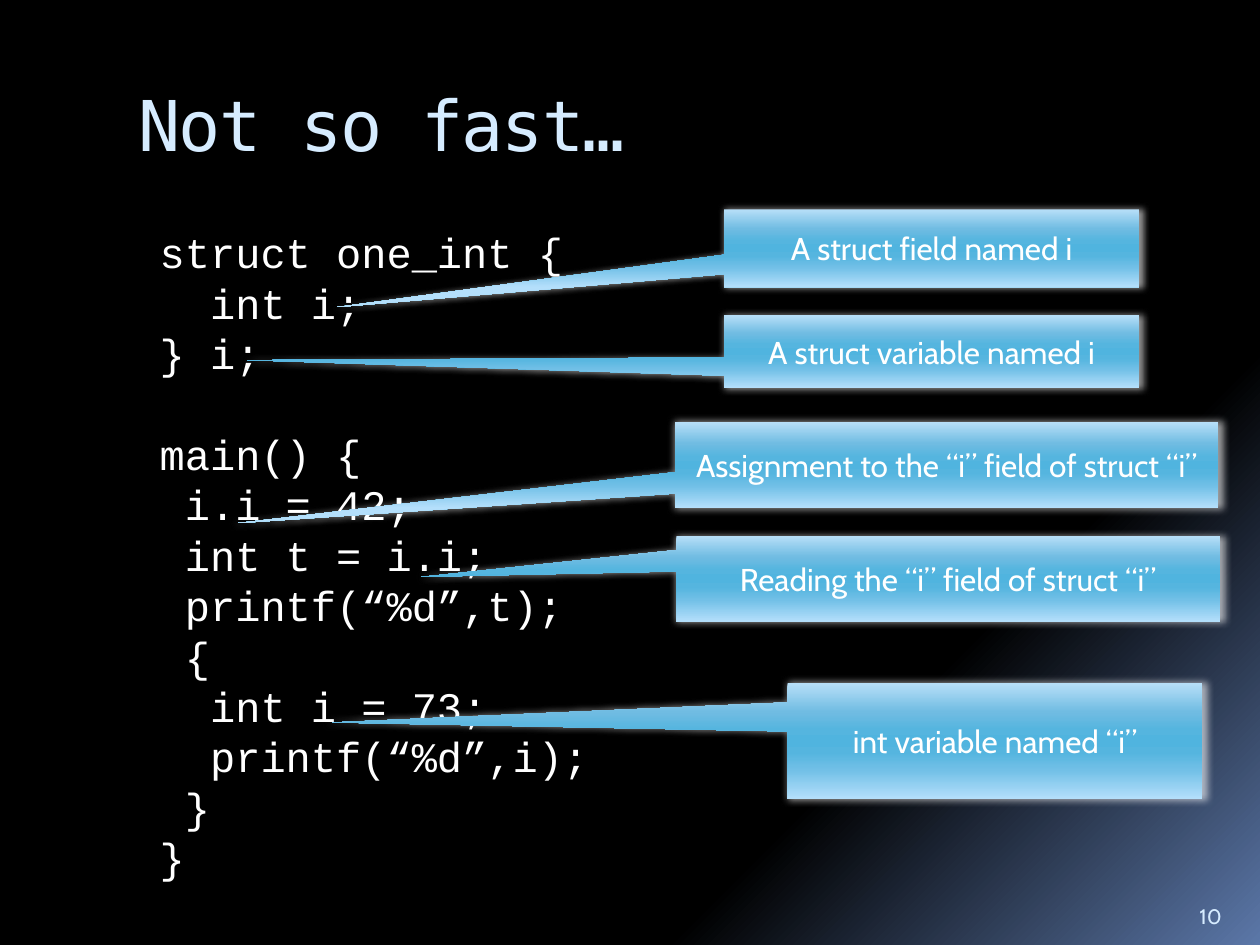
"""Builds the slide that tells apart the meanings of i in a C program."""
from lxml import etree
from pptx import Presentation
from pptx import util as u
from pptx.dml.color import RGBColor
from pptx.enum import shapes, text
from pptx.oxml import ns

WHITE = RGBColor(0xFF, 0xFF, 0xFF)
PALE_BLUE = RGBColor(0xD6, 0xEC, 0xFF)
BACKDROP = [
    (65, RGBColor(0x00, 0x00, 0x00)),
    (73, RGBColor(0x00, 0x00, 0x00)),
    (100, RGBColor(0x5B, 0x77, 0xA8)),
]
GLOSS = [
    (0, RGBColor(0xB7, 0xDF, 0xF8)),
    (25, RGBColor(0x70, 0xBC, 0xE2)),
    (40, RGBColor(0x55, 0xB5, 0xDF)),
    (50, RGBColor(0x50, 0xB4, 0xDF)),
    (60, RGBColor(0x55, 0xB5, 0xDF)),
    (75, RGBColor(0x72, 0xC0, 0xE7)),
    (100, RGBColor(0xB4, 0xDF, 0xFB)),
]
CODE_BLOCKS = [
    ["struct one_int {", "  int i;", "} i;"],
    ["main() {", " i.i = 42;", " int t = i.i;", " printf(“%d”,t);", " {",
     "  int i = 73;", "  printf(“%d”,i);", " }", "}"],
]
CALLOUTS = [
    ("A struct field named i", (14.6, 4.22, 8.36, 1.57), (-1.44, 0.76)),
    ("A struct variable named i", (14.6, 6.35, 8.36, 1.47), (-1.65, 0.12)),
    ("Assignment to the “i” field of struct “i”", (13.61, 8.51, 10.95, 1.73), (-1.31, 0.68)),
    ("int variable named “i”", (15.88, 13.77, 8.36, 2.34), (-1.6, -0.16)),
    ("Reading the “i” field of struct “i”", (13.64, 10.8, 10.95, 1.73), (-0.97, -0.02)),
]


class Deck:
    """Holds the style and the current slide."""

    body_font = "Cabin"
    code_font = "Courier New"
    title_font = "DejaVu Sans Mono"
    code_pitch = u.Pt(28.8)

    def __init__(self):
        self.presentation = Presentation()
        self.presentation.slide_width = u.Cm(25.4)
        self.presentation.slide_height = u.Cm(19.05)
        self.slide = self.presentation.slides.add_slide(self.presentation.slide_layouts[5])

    def add_run(self, paragraph, words, font, size, color):
        run = paragraph.add_run()
        run.text = words
        run.font.name = font
        run.font.size = u.Pt(size)
        run.font.color.rgb = color

    def apply_gradient(self, owner, fill, stops, angle):
        fill.gradient()
        fill.gradient_angle = 360 - angle
        stop_list = next(owner.element.iter(ns.qn("a:gsLst")))
        for stop in list(stop_list):
            stop_list.remove(stop)
        for percent, color in stops:
            stop = etree.SubElement(stop_list, ns.qn("a:gs"), pos=str(percent * 1000))
            etree.SubElement(stop, ns.qn("a:srgbClr"), val=str(color))

    def backdrop(self):
        self.apply_gradient(self.slide, self.slide.background.fill, BACKDROP, 45)

    def title(self, words, box):
        shape = self.slide.shapes.title
        shape.left, shape.top, shape.width, shape.height = map(u.Cm, box)
        frame = shape.text_frame
        frame.auto_size = text.MSO_AUTO_SIZE.NONE
        frame.vertical_anchor = text.MSO_ANCHOR.TOP
        frame.margin_top = u.Cm(0.23)
        paragraph = frame.paragraphs[0]
        paragraph.alignment = text.PP_ALIGN.LEFT
        self.add_run(paragraph, words, self.title_font, 40, PALE_BLUE)
        next(shape.element.iter(ns.qn("a:rPr"))).set("spc", "-100")

    def number(self, words, box):
        frame = self.slide.shapes.add_textbox(*map(u.Cm, box)).text_frame
        frame.word_wrap = True
        frame.vertical_anchor = text.MSO_ANCHOR.BOTTOM
        self.add_run(frame.paragraphs[0], words, self.body_font, 12, PALE_BLUE)

    def code(self, blocks, box):
        frame = self.slide.shapes.add_textbox(*map(u.Cm, box)).text_frame
        frame.word_wrap = False
        paragraph = frame.paragraphs[0]
        for block_index, block in enumerate(blocks):
            for line_index, line in enumerate(block):
                if block_index or line_index:
                    paragraph = frame.add_paragraph()
                if block_index and not line_index:
                    paragraph.space_before = self.code_pitch
                paragraph.line_spacing = self.code_pitch
                self.add_run(paragraph, line, self.code_font, 24, WHITE)

    def callout(self, words, box, tip):
        shape = self.slide.shapes.add_shape(
            shapes.MSO_SHAPE.RECTANGULAR_CALLOUT, *map(u.Cm, box))
        shape.adjustments[0], shape.adjustments[1] = tip
        self.apply_gradient(shape, shape.fill, GLOSS, 90)
        shape.line.fill.background()
        self.halo(shape)
        frame = shape.text_frame
        frame.word_wrap = True
        frame.vertical_anchor = text.MSO_ANCHOR.MIDDLE
        paragraph = frame.paragraphs[0]
        paragraph.alignment = text.PP_ALIGN.CENTER
        self.add_run(paragraph, words, self.body_font, 18, WHITE)

    def halo(self, shape):
        shape.shadow.inherit = False
        effects = next(shape.element.iter(ns.qn("a:effectLst")))
        shadow = etree.SubElement(
            effects, ns.qn("a:outerShdw"), blurRad="50800", dist="12700", dir="0",
            sx="101000", sy="101000", algn="ctr", rotWithShape="0")
        color = etree.SubElement(shadow, ns.qn("a:srgbClr"), val=str(WHITE))
        etree.SubElement(color, ns.qn("a:alpha"), val="60000")


def main():
    deck = Deck()
    deck.backdrop()
    deck.title("Not so fast…", (2.54, 1.42, 21.59, 2.54))
    deck.number("10", (23.93, 17.83, 1.27, 1.02))
    deck.code(CODE_BLOCKS, (2.97, 4.45, 9.22, 13.59))
    for words, box, tip in CALLOUTS:
        deck.callout(words, box, tip)
    deck.presentation.save("out.pptx")


if __name__ == "__main__":
    main()
